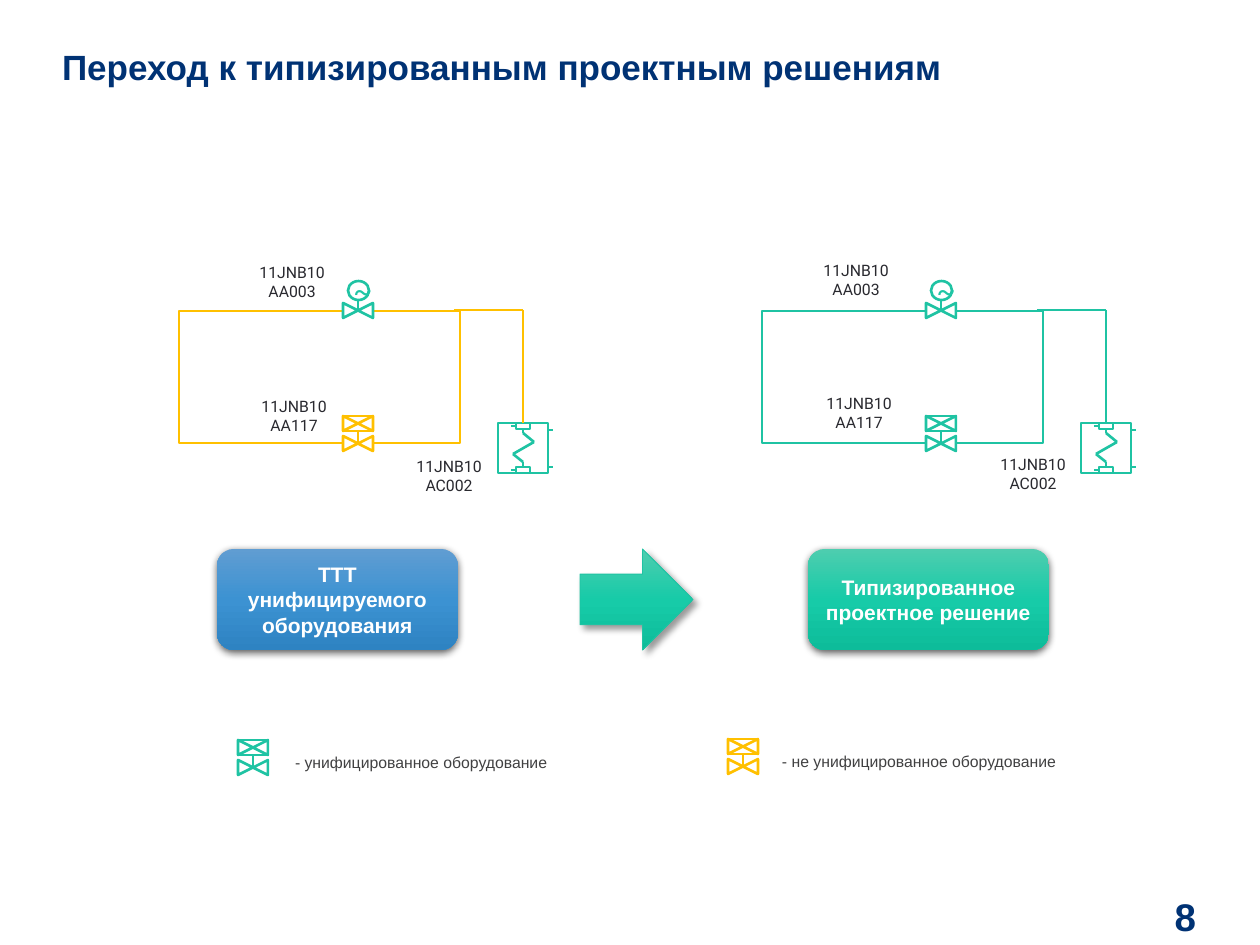
"""Build a slide comparing two valve schemes before and after unification."""
import copy
import itertools

import lxml.etree
import pptx
import pptx.dml.color
import pptx.enum.shapes
import pptx.enum.text
import pptx.oxml.ns
import pptx.util

RGB = pptx.dml.color.RGBColor
SHAPE = pptx.enum.shapes.MSO_SHAPE
ALIGN = pptx.enum.text.PP_ALIGN
ANCHOR = pptx.enum.text.MSO_ANCHOR
AUTO_SIZE = pptx.enum.text.MSO_AUTO_SIZE
qn = pptx.oxml.ns.qn

NAVY = RGB(0x00, 0x32, 0x74)
WHITE = RGB(0xFF, 0xFF, 0xFF)
UNIFIED = RGB(0x1F, 0xC3, 0xA3)
NOT_UNIFIED = RGB(0xFF, 0xC0, 0x00)
TILDE = RGB(0x20, 0xC6, 0xA6)
TAG_INK = RGB(0x29, 0x29, 0x2F)
LEGEND_INK = RGB(0x41, 0x41, 0x42)
BLUES = (RGB(0x60, 0x9D, 0xD2), RGB(0x3C, 0x92, 0xD2), RGB(0x2E, 0x83, 0xC2))
GREENS = (RGB(0x4E, 0xCD, 0xAF), RGB(0x17, 0xCB, 0xA8), RGB(0x0D, 0xBC, 0x9A))
BOX_SHADOW = (63, 4.5, 1.5, 90)
ARROW_SHADOW = (40, 4, 3, 45)


class SchemeSlide:
    EMU_PER_PX = 914400 / 126
    STROKE = 1.5

    def __init__(self, deck):
        deck.slide_width, deck.slide_height = self.px(1260), self.px(945)
        self.slide = deck.slides.add_slide(deck.slide_layouts[5])

    def px(self, *lengths):
        scaled = [pptx.util.Emu(round(n * self.EMU_PER_PX)) for n in lengths]
        return scaled if len(scaled) > 1 else scaled[0]

    def add_text(self, shape, text, size, color, bold=False, font="Arial",
                 align=ALIGN.CENTER, anchor=ANCHOR.MIDDLE, inset=True, grow=False):
        frame = shape.text_frame
        frame.word_wrap = True
        frame.auto_size = AUTO_SIZE.SHAPE_TO_FIT_TEXT if grow else AUTO_SIZE.NONE
        frame.vertical_anchor = anchor
        if not inset:
            frame.margin_left = frame.margin_right = 0
            frame.margin_top = frame.margin_bottom = 0
        paragraph = frame.paragraphs[0]
        paragraph.alignment = align
        run = paragraph.add_run()
        run.text = text
        run.font.size = pptx.util.Pt(size)
        run.font.name = font
        run.font.bold = bold
        run.font.color.rgb = color

    def title(self, text):
        heading = self.slide.shapes.title
        heading.left, heading.top, heading.width, heading.height = self.px(62, 0, 1041, 132)
        self.add_text(heading, text, 20, NAVY, bold=True, align=ALIGN.LEFT, inset=False)

    def page_number(self, text):
        number = self.slide.shapes.add_textbox(*self.px(1142, 890, 54, 52))
        self.add_text(number, text, 22, NAVY, bold=True, align=ALIGN.RIGHT, inset=False)

    def outline(self, kind, box, color=None, rotation=0, stroke=STROKE):
        shape = self.slide.shapes.add_shape(kind, *self.px(*box))
        shape.shadow.inherit = False
        shape.rotation = rotation
        shape.fill.solid()
        shape.fill.fore_color.rgb = WHITE
        if color is None:
            shape.line.fill.background()
        else:
            shape.line.color.rgb = color
            shape.line.width = pptx.util.Pt(stroke)
        return shape

    def line(self, start, end, color, begin=None, finish=None):
        connector = self.slide.shapes.add_connector(
            pptx.enum.shapes.MSO_CONNECTOR.STRAIGHT, *self.px(*start, *end))
        connector.line.color.rgb = color
        connector.line.width = pptx.util.Pt(self.STROKE)
        lxml.etree.SubElement(connector._element.spPr, qn("a:effectLst"))
        if begin:
            connector.begin_connect(*begin)
        if finish:
            connector.end_connect(*finish)

    def bow_tie(self, x, y, color):
        for left, rotation in ((x, 90), (x + 15, 270)):
            self.outline(SHAPE.ISOSCELES_TRIANGLE, (left, y, 15, 15), color, rotation)

    def motor_valve(self, x, y, color):
        motor = self.outline(SHAPE.OVAL, (x + 5, y - 22, 21, 19), color)
        self.add_text(motor, "~", 16, TILDE, font="Roboto")
        self.bow_tie(x, y, color)
        self.line((x + 15, y + 8), (x + 15, y - 3), color)

    def boxed_valve(self, x, y, color):
        self.bow_tie(x, y, color)
        actuator = self.outline(SHAPE.RECTANGLE, (x, y - 20, 30, 15), color)
        self.bow_tie(x, y - 20, color)
        self.line((x + 15, y + 8), (x + 15, y - 5), color, finish=(actuator, 2))

    def heat_exchanger(self, x, y, color):
        body = self.outline(SHAPE.RECTANGLE, (x, y, 50, 50), color)
        inlet, outlet = [self.outline(SHAPE.RECTANGLE, (x + 18, y + dy, 14, 6), color)
                         for dy in (0, 44)]
        coil = [(25, 6), (25, 10), (36, 19), (15, 31), (25, 39), (25, 44)]
        coil = [(x + dx, y + dy) for dx, dy in coil]
        for start, end in itertools.pairwise(coil):
            self.line(start, end, color,
                      begin=(inlet, 2) if start == coil[0] else None,
                      finish=(outlet, 0) if end == coil[-1] else None)
        for dx, dy in ((50, 7), (50, 44), (13, 3), (13, 47)):
            self.line((x + dx, y + dy), (x + dx + 5, y + dy), color)
        return body

    def scheme(self, x, pipe_color):
        self.outline(SHAPE.RECTANGLE, (x, 311, 281, 132), pipe_color)
        self.motor_valve(x + 164, 303, UNIFIED)
        self.boxed_valve(x + 164, 436, pipe_color)
        exchanger = self.heat_exchanger(x + 319, 423, UNIFIED)
        corner = (x + 344, 310)
        self.line((x + 275, 310), corner, pipe_color)
        self.line(corner, (x + 344, 423), pipe_color, finish=(exchanger, 0))

    def tag(self, x, y, code):
        label = self.outline(SHAPE.RECTANGLE, (x, y, 92, 38), WHITE, stroke=1)
        self.add_text(label, f"11JNB10 {code}", 9, TAG_INK, font="Roboto",
                      anchor=ANCHOR.TOP, inset=False, grow=True)

    def legend(self, x, y, text):
        caption = self.outline(SHAPE.RECTANGLE, (x, y, 407, 19))
        self.add_text(caption, text, 9, LEGEND_INK, align=ALIGN.LEFT,
                      anchor=ANCHOR.TOP, inset=False, grow=True)

    def glossy(self, kind, box, colors, shadow, edge=None):
        shape = self.outline(kind, box, edge, stroke=0.5)
        shape.fill.gradient()
        shape.fill.gradient_angle = 270
        stops = shape._element.spPr.find(".//" + qn("a:gsLst"))
        stops.insert(1, copy.deepcopy(stops[0]))
        for stop, position, color in zip(shape.fill.gradient_stops, (0, 0.5, 1), colors):
            stop.position = position
            stop.color.rgb = color
        opacity, blur, distance, angle = shadow
        effects = shape._element.spPr.find(qn("a:effectLst"))
        outer = lxml.etree.SubElement(
            effects, qn("a:outerShdw"), blurRad=str(pptx.util.Pt(blur)),
            dist=str(pptx.util.Pt(distance)), dir=str(angle * 60000), rotWithShape="0")
        black = lxml.etree.SubElement(outer, qn("a:srgbClr"), val="000000")
        lxml.etree.SubElement(black, qn("a:alpha"), val=str(opacity * 1000))
        return shape

    def stage(self, x, text, colors):
        box = self.glossy(SHAPE.ROUNDED_RECTANGLE, (x, 549, 241, 101), colors, BOX_SHADOW)
        self.add_text(box, text, 12, WHITE, bold=True)


def main():
    deck = pptx.Presentation()
    page = SchemeSlide(deck)
    page.title("Переход к типизированным проектным решениям")
    page.page_number("8")

    page.scheme(179, NOT_UNIFIED)
    page.scheme(762, UNIFIED)
    for x, y, code in ((246, 263, "AA003"), (248, 397, "AA117"), (403, 457, "AC002"),
                       (810, 261, "AA003"), (813, 394, "AA117"), (987, 455, "AC002")):
        page.tag(x, y, code)

    page.glossy(SHAPE.RIGHT_ARROW, (580, 549, 113, 101), GREENS, ARROW_SHADOW, UNIFIED)
    page.stage(217, "ТТТ унифицируемого оборудования", BLUES)
    page.stage(808, "Типизированное проектное решение", GREENS)

    page.legend(295, 753, "- унифицированное оборудование")
    page.boxed_valve(238, 760, UNIFIED)
    page.legend(782, 752, "- не унифицированное оборудование")
    page.boxed_valve(728, 759, NOT_UNIFIED)
    deck.save("out.pptx")


if __name__ == "__main__":
    main()
